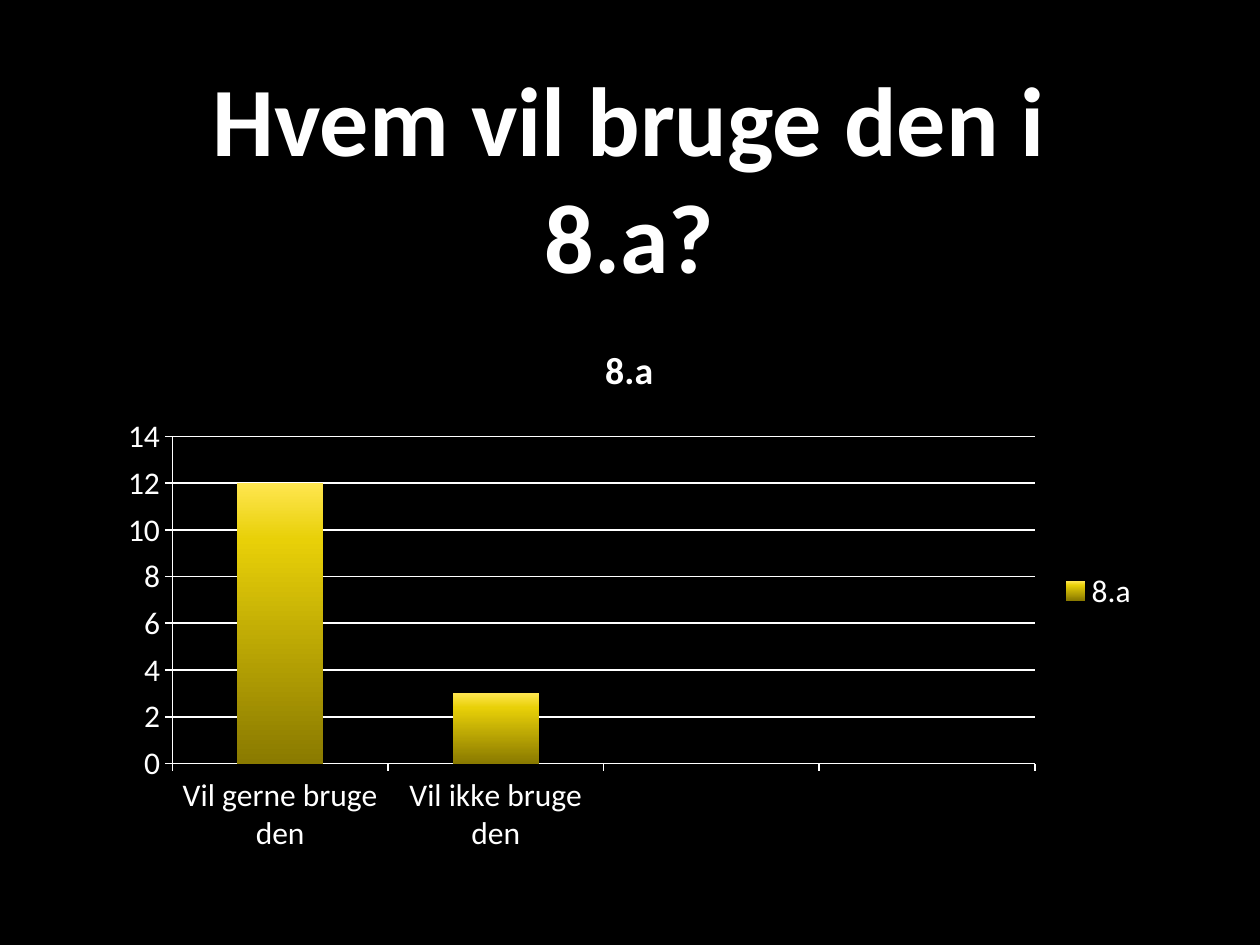
from copy import deepcopy
from dataclasses import dataclass

from pptx import Presentation
from pptx.chart.data import CategoryChartData
from pptx.dml.color import RGBColor
from pptx.enum.chart import XL_CHART_TYPE, XL_LEGEND_POSITION, XL_TICK_MARK
from pptx.enum.text import MSO_ANCHOR, PP_ALIGN
from pptx.util import Pt

COLUMN = XL_CHART_TYPE.COLUMN_CLUSTERED
RIGHT = XL_LEGEND_POSITION.RIGHT
OUTSIDE = XL_TICK_MARK.OUTSIDE
MIDDLE = MSO_ANCHOR.MIDDLE
CENTER = PP_ALIGN.CENTER


@dataclass(frozen=True)
class Theme:
    """Colours, font and type sizes of the slide."""
    back: str = "000000"
    ink: str = "FFFFFF"
    bar: tuple = ((0, "FFE64F"), (0.2, "E8D008"), (1, "8A7A00"))
    font: str = "Calibri"
    title: float = 56
    head: float = 21.6
    label: float = 18
    line: float = 1


THEME = Theme()
LEFT, WIDTH = Pt(61.2), Pt(596.9)


def style(font, size, bold=False):
    """Set the face, size, weight and colour of a font."""
    font.name = THEME.font
    font.size = Pt(size)
    font.bold = bold
    font.color.rgb = RGBColor.from_string(THEME.ink)


def write(frame, text, size, bold=True, align=CENTER):
    """Put formatted text in a text frame."""
    frame.text = text
    para = frame.paragraphs[0]
    para.alignment = align
    style(para.runs[0].font, size, bold)


def stroke(form):
    """Draw a line of the theme's ink."""
    form.line.color.rgb = RGBColor.from_string(THEME.ink)
    form.line.width = Pt(THEME.line)


def shade(fill, stops):
    """Fill from top to bottom through the given colour stops."""
    fill.gradient()
    fill.gradient_angle = 270
    first = fill.gradient_stops[0]._gs
    first.addnext(deepcopy(first))
    for stop, (place, color) in zip(fill.gradient_stops, stops):
        stop.position = place
        stop.color.rgb = RGBColor.from_string(color)


def add_title(slide, text):
    """Place and fill the title placeholder."""
    title = slide.shapes.title
    title.left, title.top = LEFT, Pt(35.3)
    title.width, title.height = WIDTH, Pt(130.3)
    frame = title.text_frame
    frame.word_wrap = True
    frame.vertical_anchor = MIDDLE
    write(frame, text, THEME.title)


def add_bars(slide, name, cats, vals):
    """Add a column chart with a title and a legend."""
    data = CategoryChartData()
    data.categories = cats
    data.add_series(name, vals)
    chart = slide.shapes.add_chart(
        COLUMN, LEFT, Pt(182.2), WIDTH, Pt(311), data).chart
    style(chart.font, THEME.label)
    chart.has_title = True
    write(chart.chart_title.text_frame, name, THEME.head)
    chart.chart_title.include_in_layout = False
    chart.has_legend = True
    chart.legend.position = RIGHT
    chart.legend.include_in_layout = False
    for axis in (chart.category_axis, chart.value_axis):
        axis.major_tick_mark = OUTSIDE
        stroke(axis.format)
    chart.value_axis.has_major_gridlines = True
    stroke(chart.value_axis.major_gridlines.format)
    plot = chart.plots[0]
    plot.gap_width = 150
    plot.vary_by_categories = False
    shade(plot.series[0].format.fill, THEME.bar)


def main():
    """Build and save the slide."""
    deck = Presentation()
    deck.slide_width, deck.slide_height = Pt(720), Pt(540)
    slide = deck.slides.add_slide(deck.slide_layouts[5])
    fill = slide.background.fill
    fill.solid()
    fill.fore_color.rgb = RGBColor.from_string(THEME.back)
    add_title(slide, "Hvem vil bruge den i 8.a?")
    cats = ["Vil gerne bruge den", "Vil ikke bruge den", "", ""]
    add_bars(slide, "8.a", cats, [12, 3, None, None])
    deck.save("out.pptx")


if __name__ == "__main__":
    main()
